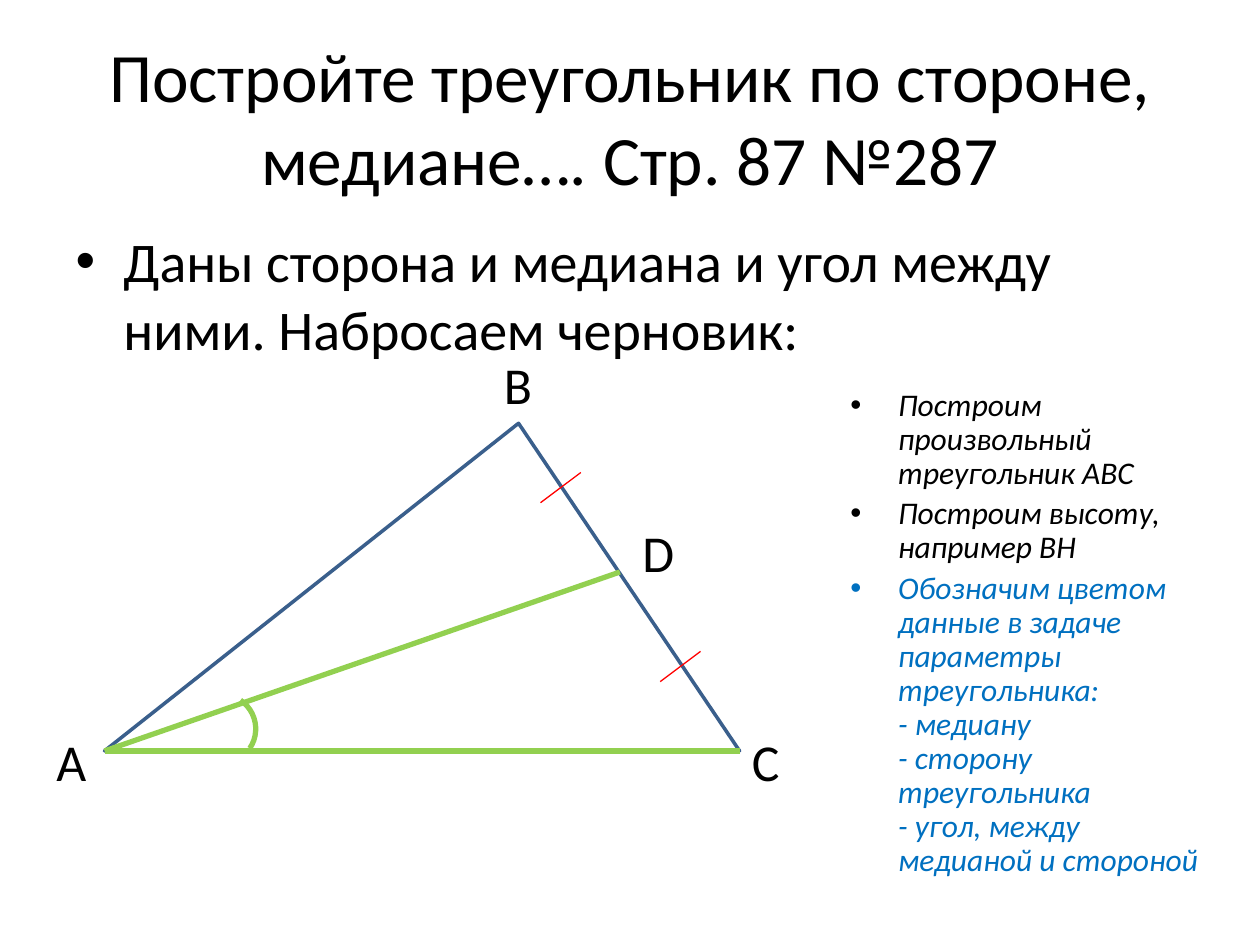
from lxml import etree
from pptx import Presentation
from pptx.dml.color import RGBColor
from pptx.enum.shapes import MSO_CONNECTOR, MSO_SHAPE
from pptx.enum.text import MSO_ANCHOR, MSO_AUTO_SIZE, PP_ALIGN
from pptx.oxml.ns import qn
from pptx.util import Inches, Pt

STRAIGHT = MSO_CONNECTOR.STRAIGHT
TRIANGLE, ARC = MSO_SHAPE.ISOSCELES_TRIANGLE, MSO_SHAPE.ARC
TOP, MIDDLE = MSO_ANCHOR.TOP, MSO_ANCHOR.MIDDLE
LEFT, CENTER = PP_ALIGN.LEFT, PP_ALIGN.CENTER

BLACK, BLUE, NAVY, GREEN, RED = "000000", "0070C0", "3A5F8C", "92D050", "FF0000"
FONT = "Calibri"
INDENT = 0.38

TITLE = "Постройте треугольник по стороне, медиане…. Стр. 87 №287"
TASK = "Даны сторона и медиана и угол между ними. Набросаем черновик:"
STEPS = [
    ("Построим произвольный треугольник ABC", BLACK),
    ("Построим высоту, например BH", BLACK),
    ("Обозначим цветом данные в задаче параметры треугольника:\n- медиану\n"
     "- сторону треугольника\n- угол, между медианой и стороной", BLUE),
]

# Triangle ABC: its bounding box and the share of the base where the apex B lies
TRI_LEFT, TRI_TOP, TRI_W, TRI_H = 0.83, 3.36, 5.04, 2.6
APEX = 0.652
A = (TRI_LEFT, TRI_TOP + TRI_H)
C = (TRI_LEFT + TRI_W, TRI_TOP + TRI_H)
D = (4.92, 4.54)
LABELS = {"A": (0.35, 5.8), "B": (3.9, 2.81), "C": (5.87, 5.8), "D": (5, 4.14)}
LABEL_W, LABEL_H = 0.54, 0.55
TICK_CENTERS = [(4.45, 3.87), (5.4, 5.29)]
TICK_W, TICK_H = 0.32, 0.24
ARC_BOX = (1.48, 5.51, 0.55, 0.55)
ARC_TURN = 34.1


def rgb(color):
    return RGBColor.from_string(color)


def place(s, box):
    for name, value in zip(("left", "top", "width", "height"), box):
        setattr(s, name, Inches(value))


def write(s, paragraphs, size, align=LEFT, anchor=TOP, spacing=None,
          before=0.2, bullet=False, italic=False):
    """Fill a shape with (text, colour) paragraphs; before is a share of size."""
    tf = s.text_frame
    tf.word_wrap, tf.auto_size, tf.vertical_anchor = True, MSO_AUTO_SIZE.NONE, anchor
    for i, (text, color) in enumerate(paragraphs):
        p = tf.add_paragraph() if i else tf.paragraphs[0]
        p.text = text
        p.alignment, p.line_spacing = align, spacing
        p.space_before = Pt(size * before)
        if bullet:
            pPr = p._p.get_or_add_pPr()
            pPr.set("marL", str(Inches(INDENT)))
            pPr.set("indent", str(-Inches(INDENT)))
            etree.SubElement(pPr, qn("a:buFont")).set("typeface", "Arial")
            etree.SubElement(pPr, qn("a:buChar")).set("char", "•")
        for r in p.runs:
            for name, value in {"name": FONT, "size": Pt(size), "italic": italic}.items():
                setattr(r.font, name, value)
            r.font.color.rgb = rgb(color)


def outline(s, color, width):
    s.line.color.rgb, s.line.width = rgb(color), Pt(width)


def add_outlined(shape_type, box, color, width):
    s = slide.shapes.add_shape(shape_type, *map(Inches, box))
    s.shadow.inherit = False
    s.fill.background()
    outline(s, color, width)
    return s


def add_line(start, end, color, width):
    s = slide.shapes.add_connector(STRAIGHT, *map(Inches, start + end))
    outline(s, color, width)
    etree.SubElement(s._element.spPr, qn("a:effectLst"))


def add_text(box, paragraphs, size, **fmt):
    write(slide.shapes.add_textbox(*map(Inches, box)), paragraphs, size, spacing=0.9, **fmt)


prs = Presentation()
prs.slide_width, prs.slide_height = Inches(10), Inches(7.5)
slide = prs.slides.add_slide(prs.slide_layouts[1])
title, task = slide.placeholders

place(title, (0.5, 0.3, 9, 1.25))
write(title, [(TITLE, BLACK)], 39.6, align=CENTER, anchor=MIDDLE, before=0)
place(task, (0.5, 1.75, 9, 1.29))
write(task, [(TASK, BLACK)], 32, bullet=True)

triangle = add_outlined(TRIANGLE, (TRI_LEFT, TRI_TOP, TRI_W, TRI_H), NAVY, 2)
triangle.adjustments[0] = APEX
for letter, corner in LABELS.items():
    add_text(corner + (LABEL_W, LABEL_H), [(letter, BLACK)], 29.6)

for end in (D, C):
    add_line(A, end, GREEN, 3)
for x, y in TICK_CENTERS:
    add_line((x + TICK_W / 2, y - TICK_H / 2), (x - TICK_W / 2, y + TICK_H / 2), RED, 0.75)
add_outlined(ARC, ARC_BOX, GREEN, 3).rotation = ARC_TURN

add_text((6.65, 3.04, 3.07, 4.09), STEPS, 18, bullet=True, italic=True)

prs.save("out.pptx")
